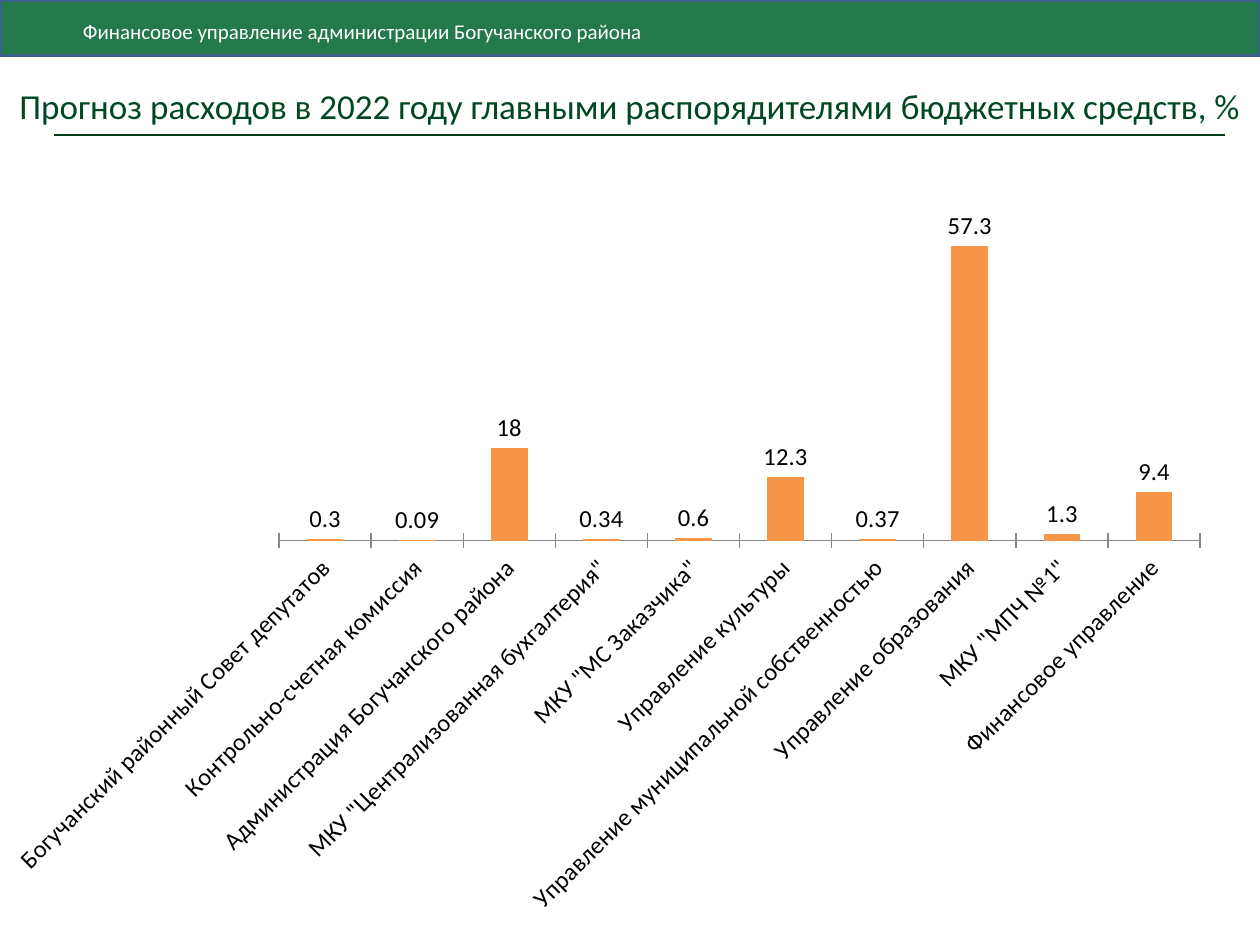
from dataclasses import dataclass

from lxml.etree import SubElement
from pptx import Presentation
from pptx.chart.data import CategoryChartData
from pptx.dml.color import RGBColor
from pptx.enum.chart import XL_CHART_TYPE, XL_LABEL_POSITION, XL_TICK_MARK
from pptx.enum.shapes import MSO_CONNECTOR, MSO_SHAPE
from pptx.enum.text import MSO_ANCHOR, PP_ALIGN
from pptx.oxml.ns import qn
from pptx.util import Pt


@dataclass(frozen=True)
class Theme:
    font: str = "Calibri"
    banner: str = "00642D"
    banner_edge: str = "3A5F8C"
    rule: str = "003E1C"
    title: str = "004821"
    bar: str = "F79646"
    axis: str = "868686"
    white: str = "FFFFFF"
    black: str = "000000"
    title_size: int = 20
    label_size: int = 14
    banner_size: int = 12


THEME = Theme()

EXPENSES = {
    "Богучанский районный Совет депутатов": 0.3,
    "Контрольно-счетная комиссия": 0.09,
    "Администрация Богучанского района": 18,
    'МКУ "Централизованная бухгалтерия"': 0.34,
    'МКУ "МС Заказчика"': 0.6,
    "Управление культуры": 12.3,
    "Управление муниципальной собственностью": 0.37,
    "Управление образования": 57.3,
    'МКУ "МПЧ №1"': 1.3,
    "Финансовое управление": 9.4,
}


def color(value):
    return RGBColor.from_string(value)


def format_font(font, size, fill):
    font.name = THEME.font
    font.size = Pt(size)
    font.bold = False
    font.color.rgb = color(fill)


def write_text(box, text, *, size, fill, align=PP_ALIGN.LEFT, insets=(7.2, 3.6, 7.2, 3.6)):
    frame = box.text_frame
    frame.word_wrap = True
    frame.vertical_anchor = MSO_ANCHOR.MIDDLE
    frame.margin_left, frame.margin_top, frame.margin_right, frame.margin_bottom = map(Pt, insets)
    para = frame.paragraphs[0]
    para.alignment = align
    span = para.add_run()
    span.text = text
    format_font(span.font, size, fill)


def add_banner(page, text):
    banner = page.shapes.add_shape(MSO_SHAPE.RECTANGLE, 0, 0, Pt(720), Pt(31.7))
    banner.shadow.inherit = False
    banner.fill.solid()
    banner.fill.fore_color.rgb = color(THEME.banner)
    fill_color = banner.fill._xPr.find(qn("a:solidFill"))[0]
    SubElement(fill_color, qn("a:alpha")).set("val", "86000")
    banner.line.color.rgb = color(THEME.banner_edge)
    banner.line.width = Pt(2)
    write_text(banner, text, size=THEME.banner_size, fill=THEME.white, insets=(47.4, 4, 7.2, 0))


def add_rule(page, left, right, top):
    rule = page.shapes.add_connector(MSO_CONNECTOR.STRAIGHT, Pt(left), Pt(top), Pt(right), Pt(top))
    rule.line.color.rgb = color(THEME.rule)
    rule.line.width = Pt(1.25)
    SubElement(rule._element.spPr, qn("a:effectLst"))


def place_title(page, text):
    title = page.shapes.title
    title.left, title.top, title.width, title.height = 0, Pt(31.7), Pt(720), Pt(56.9)
    write_text(title, text, size=THEME.title_size, fill=THEME.title, align=PP_ALIGN.CENTER)


def fix_plot_area(chart, **fractions):
    """Place the inner plot area by fractions of the chart frame."""
    area = chart._chartSpace.chart.plotArea
    for old in area.findall(qn("c:layout")):
        area.remove(old)
    layout = SubElement(area, qn("c:layout"))
    area.insert(0, layout)
    manual = SubElement(layout, qn("c:manualLayout"))
    settings = {"layoutTarget": "inner", "xMode": "edge", "yMode": "edge", **fractions}
    for name, value in settings.items():
        SubElement(manual, qn(f"c:{name}")).set("val", str(value))


def add_expense_chart(page, expenses):
    table = CategoryChartData()
    table.categories = list(expenses)
    table.add_series("Series 1", list(expenses.values()))
    chart = page.shapes.add_chart(
        XL_CHART_TYPE.COLUMN_CLUSTERED, 0, Pt(94.3), Pt(705.6), Pt(436.3), table
    ).chart
    chart.has_legend = False
    chart.has_title = False
    format_font(chart.font, 18, THEME.black)
    fix_plot_area(chart, x=0.226, y=0.02, w=0.746, h=0.472)

    # Columns and their values
    plot = chart.plots[0]
    plot.vary_by_categories = False
    plot.gap_width = 150
    columns = plot.series[0]
    columns.format.fill.solid()
    columns.format.fill.fore_color.rgb = color(THEME.bar)
    labels = columns.data_labels
    labels.show_value = True
    labels.position = XL_LABEL_POSITION.OUTSIDE_END
    format_font(labels.font, THEME.label_size, THEME.black)

    # Axes
    values = chart.value_axis
    values.minimum_scale, values.maximum_scale = 0, 70
    values.has_major_gridlines = False
    values.visible = False
    names = chart.category_axis
    names.major_tick_mark = XL_TICK_MARK.CROSS
    names.format.line.color.rgb = color(THEME.axis)
    names.format.line.width = Pt(0.75)
    format_font(names.tick_labels.font, THEME.label_size, THEME.black)
    names._element.find(qn("c:txPr")).find(qn("a:bodyPr")).set("rot", str(-45 * 60000))


def main():
    deck = Presentation()
    deck.slide_width, deck.slide_height = Pt(720), Pt(540)
    page = deck.slides.add_slide(deck.slide_layouts[5])

    # Header
    add_banner(page, "Финансовое управление администрации Богучанского района")
    add_rule(page, left=31, right=700, top=77)
    place_title(page, "Прогноз расходов в 2022 году главными распорядителями бюджетных средств, %")

    # Expenses by main budget manager
    add_expense_chart(page, EXPENSES)
    deck.save("out.pptx")


if __name__ == "__main__":
    main()
